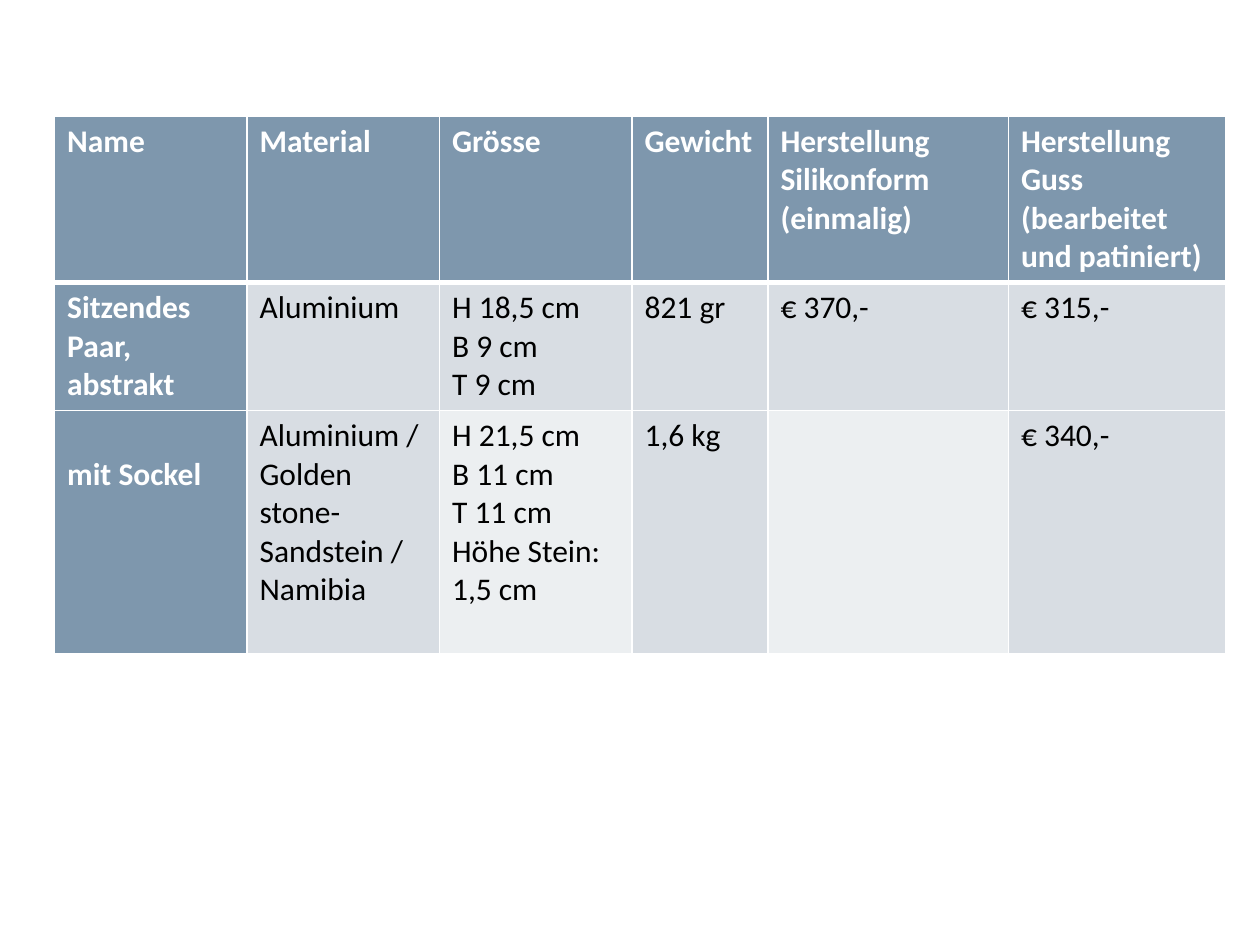
"""Build a slide with the price table of a cast sculpture."""
from dataclasses import dataclass

from lxml import etree
from pptx import Presentation
from pptx import util as u
from pptx.dml.color import RGBColor
from pptx.oxml import ns


@dataclass(frozen=True)
class Theme:
    font: str = "Calibri"
    size: int = 18
    heading_fill: str = "7E97AD"
    heading_text: str = "FFFFFF"
    band_fill: str = "D8DDE3"
    light_fill: str = "ECEFF1"
    body_text: str = "000000"
    rule: str = "FFFFFF"
    thin: int = 1
    thick: int = 3


class PriceSlide:
    def __init__(self, slide, theme):
        self.slide = slide
        self.theme = theme

    def add_border(self, cell, side, width):
        props = cell._tc.get_or_add_tcPr()
        edge = etree.SubElement(props, ns.qn(f"a:ln{side}"), w=str(u.Pt(width)))
        paint = etree.SubElement(edge, ns.qn("a:solidFill"))
        etree.SubElement(paint, ns.qn("a:srgbClr"), val=self.theme.rule)

    def add_cell(self, cell, wording, fill, heading, widths):
        for side, width in zip("LRTB", widths):
            self.add_border(cell, side, width)
        cell.fill.solid()
        cell.fill.fore_color.rgb = RGBColor.from_string(fill)
        paragraph = cell.text_frame.paragraphs[0]
        paragraph.text = wording
        colour = self.theme.heading_text if heading else self.theme.body_text
        for run in paragraph.runs:
            run.font.name = self.theme.font
            run.font.size = u.Pt(self.theme.size)
            run.font.bold = heading
            run.font.color.rgb = RGBColor.from_string(colour)

    def add_table(self, left, top, columns, heights, entries, light_cells):
        frame = self.slide.shapes.add_table(
            len(heights), len(columns), u.Cm(left), u.Cm(top),
            u.Cm(sum(columns)), u.Cm(sum(heights)))
        table = frame.table
        table.first_col = True
        table.horz_banding = False
        for column, width in zip(table.columns, columns):
            column.width = u.Cm(width)
        for row, height in zip(table.rows, heights):
            row.height = u.Cm(height)
        style = self.theme
        for r, row in enumerate(entries):
            above = style.thick if r == 1 else style.thin
            below = style.thick if r == 0 else style.thin
            for c, wording in enumerate(row):
                heading = r == 0 or c == 0
                body_fill = style.light_fill if (r, c) in light_cells else style.band_fill
                fill = style.heading_fill if heading else body_fill
                self.add_cell(table.cell(r, c), wording, fill, heading,
                              (style.thin, style.thin, above, below))
        return table


def main():
    deck = Presentation()
    deck.slide_width, deck.slide_height = u.Cm(25.4), u.Cm(19.05)
    page = PriceSlide(deck.slides.add_slide(deck.slide_layouts[6]), Theme())
    entries = [
        ["Name", "Material", "Grösse", "Gewicht",
         "Herstellung Silikonform\n(einmalig)",
         "Herstellung Guss (bearbeitet und patiniert)"],
        ["Sitzendes Paar, abstrakt", "Aluminium", "H 18,5 cm\nB 9 cm\nT 9 cm",
         "821 gr", "€ 370,-", "€ 315,-"],
        ["mit Sockel", "Aluminium /\nGolden stone-\nSandstein / Namibia",
         "H 21,5 cm\nB 11 cm\nT 11 cm\nHöhe Stein:\n1,5 cm",
         "1,6 kg", "", "€ 340,-"],
    ]
    prices = page.add_table(
        1.1, 2.34, [3.88, 3.88, 3.88, 2.74, 4.85, 4.39], [3.35, 2.57, 4.9],
        entries, light_cells={(2, 2), (2, 4)})
    prices.cell(2, 0).margin_top = u.Cm(0.9)
    deck.save("out.pptx")


if __name__ == "__main__":
    main()
